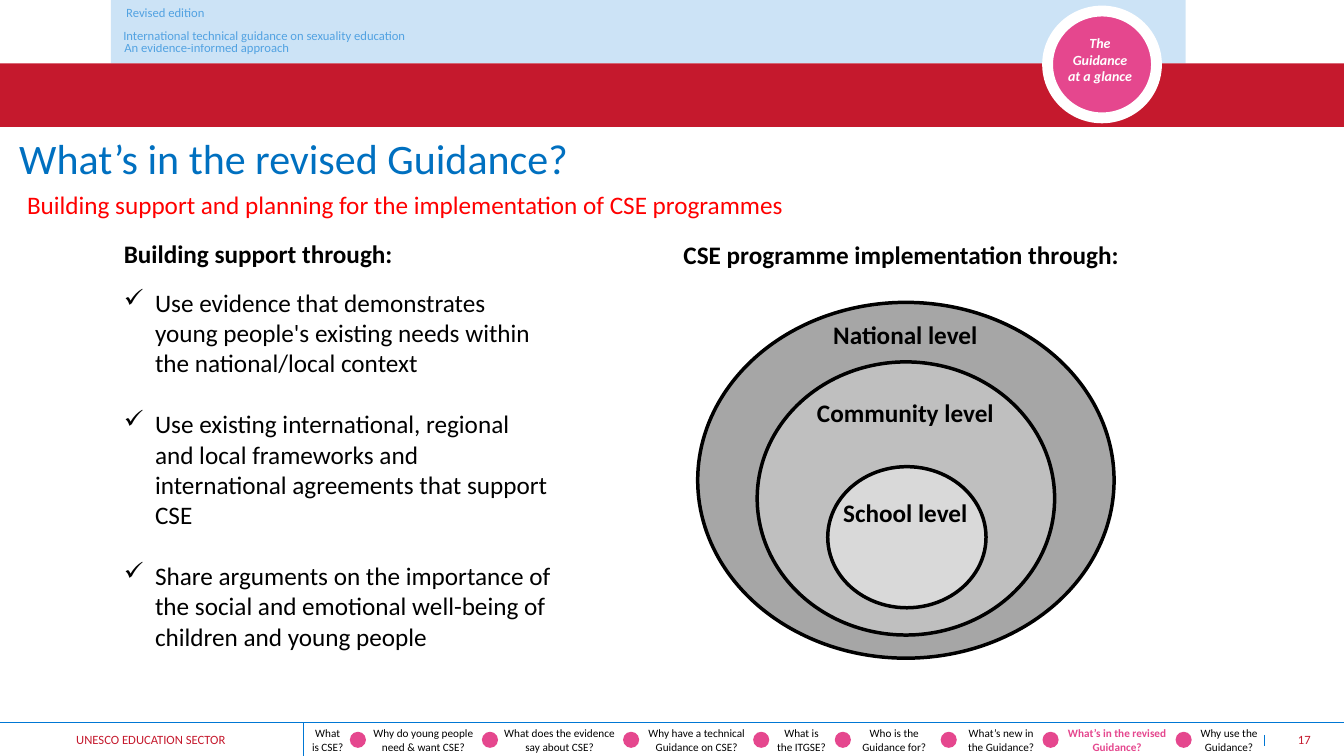
from dataclasses import dataclass

from lxml import etree
from pptx import Presentation
from pptx.dml.color import RGBColor
from pptx.enum.shapes import MSO_CONNECTOR, MSO_SHAPE
from pptx.enum.text import MSO_ANCHOR, PP_ALIGN
from pptx.oxml.ns import qn
from pptx.util import Inches, Pt

LEFT, CENTER, RIGHT = PP_ALIGN.LEFT, PP_ALIGN.CENTER, PP_ALIGN.RIGHT
TOP, MIDDLE = MSO_ANCHOR.TOP, MSO_ANCHOR.MIDDLE
RECTANGLE, OVAL = MSO_SHAPE.RECTANGLE, MSO_SHAPE.OVAL
STRAIGHT = MSO_CONNECTOR.STRAIGHT
TITLE_ONLY = 5


@dataclass(frozen=True)
class Theme:
    """Colours, font and type sizes of the slide."""
    font: str = "Calibri"
    blue: str = "0077D4"
    title_blue: str = "0070C0"
    red: str = "C5192D"
    subtitle_red: str = "FF0000"
    pink: str = "E5478E"
    white: str = "FFFFFF"
    black: str = "000000"
    greys: tuple = ("A6A6A6", "BFBFBF", "D9D9D9")
    title: int = 30
    body: int = 18
    badge: int = 10
    small: int = 9
    nav: int = 8


THEME = Theme()
SLIDE_WIDTH, SLIDE_HEIGHT = 13.33, 7.5
FOOTER_TOP = 7.17
CURRENT_SECTION = "What’s in the revised Guidance?"

HEADER_LINES = [
    ("Revised edition", (1.21, 0.02, 0.86, 0.21)),
    ("International technical guidance on sexuality education", (1.02, 0.2, 3.2, 0.3)),
    ("An evidence-informed approach", (1.12, 0.42, 1.86, 0.11)),
]
SUPPORT_ACTIONS = [
    "Use evidence that demonstrates young people's existing needs within the national/local context",
    "Use existing international, regional and local frameworks and international agreements "
    "that support CSE",
    "Share arguments on the importance of the social and emotional well-being of children "
    "and young people",
]
LEVELS = [
    ("National level", (6.92, 3, 4.13, 3.53), 3.12),
    ("Community level", (7.51, 3.59, 2.95, 2.71), 3.89),
    ("School level", (8.21, 4.63, 1.57, 1.4), 4.88),
]
SECTIONS = [
    ("What is CSE?", 2.99, 0.52),
    ("Why do young people need & want CSE?", 3.58, 1.24),
    ("What does the evidence say about CSE?", 4.84, 1.42),
    ("Why have a technical Guidance on CSE?", 6.2, 1.42),
    ("What is the ITGSE?", 7.6, 0.7),
    ("Who is the Guidance for?", 8.43, 0.88),
    ("What’s new in the Guidance?", 9.49, 0.88),
    (CURRENT_SECTION, 10.37, 1.42),
    ("Why use the Guidance?", 11.75, 0.88),
]
SEPARATOR_LEFTS = [3.47, 4.78, 6.18, 7.47, 8.28, 9.33, 10.34, 11.66]


def inches(values):
    """Convert a sequence of numbers to lengths."""
    return [Inches(value) for value in values]


def set_color(fill, color, opacity=100):
    """Apply a solid colour with an opacity in percent."""
    fill.solid()
    fill.fore_color.rgb = RGBColor.from_string(color)
    if opacity < 100:
        color_element = fill._xPr.find(".//" + qn("a:srgbClr"))
        etree.SubElement(color_element, qn("a:alpha")).set("val", str(opacity * 1000))


def add_bullet(paragraph, mark, indent):
    """Give a paragraph a hanging bullet."""
    properties = paragraph._p.get_or_add_pPr()
    properties.set("marL", str(Inches(indent)))
    properties.set("indent", str(-Inches(indent)))
    etree.SubElement(properties, qn("a:buChar")).set("char", mark)


def write_text(frame, text, size=THEME.body, color=THEME.black, opacity=100, bold=False,
               italic=False, align=LEFT, anchor=TOP, padded=True, bullet=None, gap=0):
    """Fill a text frame with one paragraph or a list of them."""
    frame.word_wrap = True
    frame.vertical_anchor = anchor
    if not padded:
        frame.margin_left = frame.margin_right = frame.margin_top = frame.margin_bottom = 0
    paragraphs = [text] if isinstance(text, str) else text
    for index, words in enumerate(paragraphs):
        paragraph = frame.add_paragraph() if index else frame.paragraphs[0]
        paragraph.alignment = align
        if index and gap:
            paragraph.space_before = Pt(gap)
        if bullet:
            add_bullet(paragraph, bullet, 0.31)
        run = paragraph.add_run()
        run.text = words
        run.font.name, run.font.size = THEME.font, Pt(size)
        run.font.bold, run.font.italic = bold, italic
        set_color(run.font.fill, color, opacity)


def add_text(slide, text, box, **text_format):
    """Add a text box."""
    write_text(slide.shapes.add_textbox(*inches(box)).text_frame, text, **text_format)


def add_figure(slide, kind, box, color, opacity=100, outline=None, weight=0):
    """Add a filled preset shape with an optional outline."""
    figure = slide.shapes.add_shape(kind, *inches(box))
    figure.shadow.inherit = False
    set_color(figure.fill, color, opacity)
    if outline:
        set_color(figure.line.fill, outline)
        figure.line.width = Pt(weight)
    else:
        figure.line.fill.background()


def add_rule(slide, ends, weight):
    """Add a straight blue line."""
    rule = slide.shapes.add_connector(STRAIGHT, *inches(ends))
    set_color(rule.line.fill, THEME.blue)
    rule.line.width = Pt(weight)
    etree.SubElement(rule._element.spPr, qn("a:effectLst"))


def add_header(slide):
    """Draw the top bands, the publication lines and the badge."""
    add_figure(slide, RECTANGLE, (1.1, 0, 10.66, 0.63), THEME.blue, opacity=20)
    add_figure(slide, RECTANGLE, (0, 0.63, SLIDE_WIDTH, 0.63), THEME.red)
    for words, box in HEADER_LINES:
        add_text(slide, words, box, size=THEME.small, color=THEME.blue, opacity=60,
                 align=CENTER, anchor=MIDDLE, padded=False)
    add_figure(slide, OVAL, (10.39, 0.11, 1.08, 1.06), THEME.pink,
               outline=THEME.white, weight=7.75)
    add_text(slide, "The Guidance at a glance", (10.49, 0.29, 0.84, 0.61), size=THEME.badge,
             color=THEME.white, bold=True, italic=True, align=CENTER)


def add_title(slide):
    """Place the title and the subtitle."""
    title = slide.shapes.title
    title.left, title.top, title.width, title.height = inches((0.19, 1.27, 8.71, 0.59))
    write_text(title.text_frame, CURRENT_SECTION, size=THEME.title, color=THEME.title_blue,
               anchor=MIDDLE, padded=False)
    add_text(slide, "Building support and planning for the implementation of CSE programmes",
             (0.17, 1.83, 8.06, 0.4), color=THEME.subtitle_red)


def add_support(slide):
    """Write the column of ways to build support."""
    add_text(slide, "Building support through:", (1.13, 2.32, 3.22, 0.4), bold=True)
    add_text(slide, SUPPORT_ACTIONS, (1.13, 2.8, 4.44, 4.04), bullet="✓", gap=22)


def add_levels(slide):
    """Draw the nested levels of implementation."""
    add_text(slide, "CSE programme implementation through:", (6.68, 2.33, 5.71, 0.4), bold=True)
    for (label, box, label_top), grey in zip(LEVELS, THEME.greys):
        add_figure(slide, OVAL, box, grey, outline=THEME.black, weight=2.5)
        add_text(slide, label, (7.9, label_top, 2.16, 0.4), bold=True, align=CENTER)


def add_footer(slide):
    """Draw the footer with its section trail and page number."""
    add_rule(slide, (0, FOOTER_TOP, SLIDE_WIDTH, FOOTER_TOP), 0.5)
    add_rule(slide, (3.01, FOOTER_TOP, 3.01, SLIDE_HEIGHT), 0.5)
    add_rule(slide, (12.54, 7.29, 12.54, 7.4), 1)
    for words, left, width, align in (("UNESCO EDUCATION SECTOR", 0, 2.99, CENTER),
                                      ("17", 12.69, 0.31, RIGHT)):
        add_text(slide, words, (left, FOOTER_TOP, width, 0.33), size=THEME.small,
                 color=THEME.red, align=align, anchor=MIDDLE, padded=False)
    for left in SEPARATOR_LEFTS:
        add_figure(slide, OVAL, (left, 7.26, 0.16, 0.16), THEME.pink)
    for section, left, width in SECTIONS:
        current = section == CURRENT_SECTION
        add_text(slide, section, (left, 7.16, width, 0.37), size=THEME.nav, align=CENTER,
                 color=THEME.pink if current else THEME.black, bold=current)


def main():
    """Build and save the slide."""
    deck = Presentation()
    deck.slide_width, deck.slide_height = inches((SLIDE_WIDTH, SLIDE_HEIGHT))
    slide = deck.slides.add_slide(deck.slide_layouts[TITLE_ONLY])
    add_header(slide)
    add_title(slide)
    add_support(slide)
    add_levels(slide)
    add_footer(slide)
    deck.save("out.pptx")


if __name__ == "__main__":
    main()
